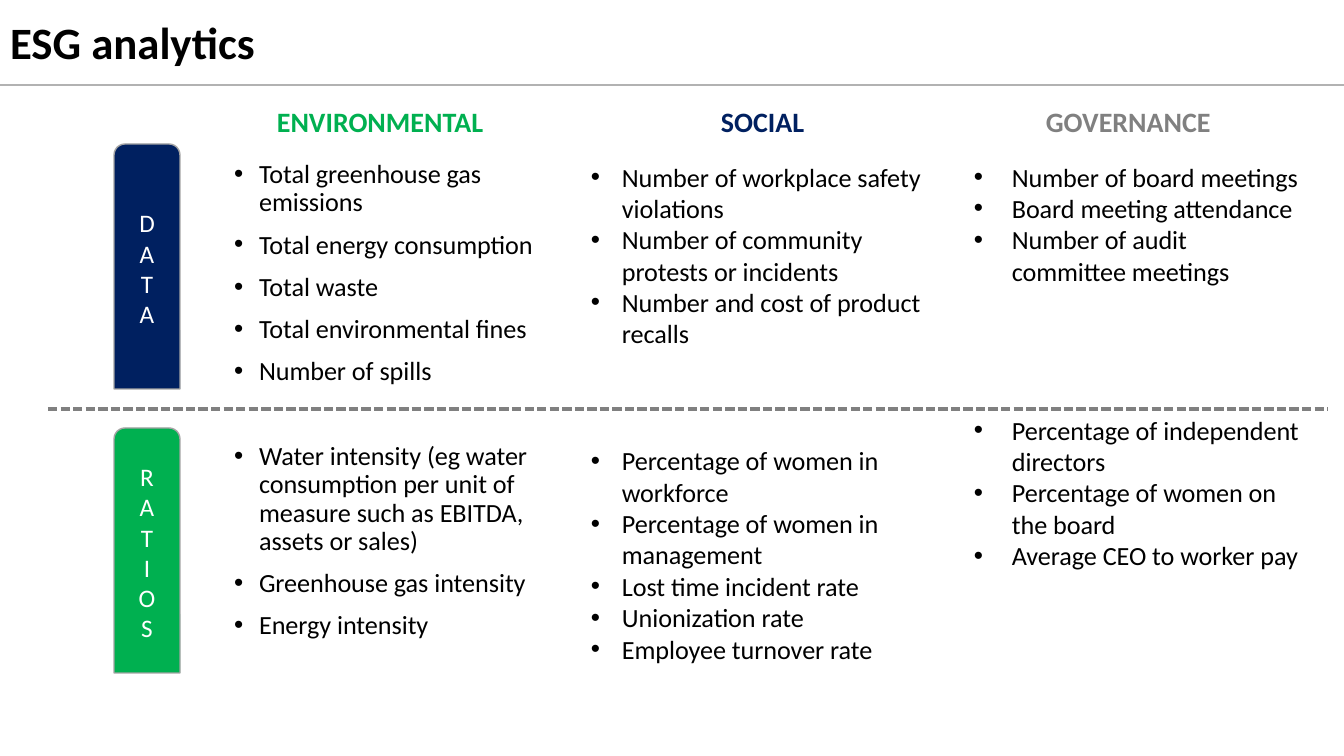
from lxml.etree import SubElement
from pptx import Presentation
from pptx.dml.color import RGBColor
from pptx.enum.dml import MSO_LINE
from pptx.enum.shapes import MSO_CONNECTOR, MSO_SHAPE
from pptx.enum.text import MSO_ANCHOR, MSO_AUTO_SIZE, PP_ALIGN
from pptx.oxml.ns import qn
from pptx.util import Emu, Pt


def px(*values):
    return [Emu(round(value * 914400 / 100.8)) for value in values]


def style(paragraph, size, color, bold=False):
    paragraph.font.name = "Calibri"
    paragraph.font.size = Pt(size)
    paragraph.font.bold = bold
    paragraph.font.color.rgb = RGBColor.from_string(color)


presentation = Presentation()
presentation.slide_width, presentation.slide_height = px(1344, 756)
slide = presentation.slides.add_slide(presentation.slide_layouts[1])
title, body = slide.placeholders

title.left, title.top, title.width, title.height = px(0, 0, 1344, 89)
title.text_frame.text = "ESG analytics"
title.text_frame.auto_size = MSO_AUTO_SIZE.NONE
title.text_frame.vertical_anchor = MSO_ANCHOR.MIDDLE
title_paragraph = title.text_frame.paragraphs[0]
title_paragraph.alignment = PP_ALIGN.LEFT
title_paragraph.line_spacing = 0.9
style(title_paragraph, 32, "000000", True)

columns = [
    {
        "heading": "ENVIRONMENTAL", "color": "00B050", "heading_box": (267, 100, 234, 44),
        "list_box": (224, 156, 349, 586), "indent": 25, "line_spacing": 0.9, "gap": 10, "ratio_gap": 40.5,
        "data": ["Total greenhouse gas emissions", "Total energy consumption", "Total waste",
                 "Total environmental fines", "Number of spills"],
        "ratios": ["Water intensity (eg water consumption per unit of measure such as EBITDA, assets or sales)",
                   "Greenhouse gas intensity", "Energy intensity"],
    },
    {
        "heading": "SOCIAL", "color": "002060", "heading_box": (711, 100, 115, 44),
        "list_box": (581, 156, 375, 526), "indent": 31, "line_spacing": 1.0, "gap": 0, "ratio_gap": 68.4,
        "data": ["Number of workplace safety violations", "Number of community protests or incidents",
                 "Number and cost of product recalls"],
        "ratios": ["Percentage of women in workforce", "Percentage of women in management",
                   "Lost time incident rate", "Unionization rate", "Employee turnover rate"],
    },
    {
        "heading": "GOVERNANCE", "color": "808080", "heading_box": (1036, 100, 204, 44),
        "list_box": (964, 156, 349, 494), "indent": 38, "line_spacing": 1.0, "gap": 0, "ratio_gap": 91.2,
        "data": ["Number of board meetings", "Board meeting attendance", "Number of audit committee meetings"],
        "ratios": ["Percentage of independent directors", "Percentage of women on the board",
                   "Average CEO to worker pay"],
    },
]

for column in columns:
    heading = slide.shapes.add_textbox(*px(*column["heading_box"]))
    heading.text_frame.word_wrap = True
    heading.text_frame.text = column["heading"]
    style(heading.text_frame.paragraphs[0], 20, column["color"], True)

    if column is columns[0]:
        list_shape = body
        body.left, body.top, body.width, body.height = px(*column["list_box"])
    else:
        list_shape = slide.shapes.add_textbox(*px(*column["list_box"]))
    frame = list_shape.text_frame
    frame.word_wrap = True
    frame.auto_size = MSO_AUTO_SIZE.NONE
    frame.text = "\n".join(column["data"] + column["ratios"])
    indent = px(column["indent"])[0]
    for index, paragraph in enumerate(frame.paragraphs):
        properties = paragraph._p.get_or_add_pPr()
        properties.set("marL", str(indent))
        properties.set("indent", str(-indent))
        SubElement(properties, qn("a:buFont"), typeface="Arial")
        SubElement(properties, qn("a:buChar"), char="•")
        paragraph.line_spacing = column["line_spacing"]
        gap = column["ratio_gap"] if index == len(column["data"]) else column["gap"]
        paragraph.space_before = Pt(gap if index else 0)
        style(paragraph, 18.67, "000000")

for label, top, color in [("DATA", 144, "002060"), ("RATIOS", 428, "00B050")]:
    bar = slide.shapes.add_shape(MSO_SHAPE.ROUND_2_SAME_RECTANGLE, *px(114, top, 66, 245))
    bar.shadow.inherit = False
    bar.fill.solid()
    bar.fill.fore_color.rgb = RGBColor.from_string(color)
    bar.line.color.rgb = RGBColor.from_string("A3A3A3")
    bar.line.width = Pt(1)
    bar.text_frame.word_wrap = True
    bar.text_frame.vertical_anchor = MSO_ANCHOR.MIDDLE
    letters = bar.text_frame.paragraphs[0]
    letters.text = "\v".join(label)
    letters.alignment = PP_ALIGN.CENTER
    style(letters, 18, "FFFFFF")

for left, right, y, color, width, dash in [
    (0, 1344, 85, "B2B2B2", 1.5, MSO_LINE.SOLID),
    (48, 1328, 409, "808080", 2.25, MSO_LINE.SQUARE_DOT),
]:
    divider = slide.shapes.add_connector(MSO_CONNECTOR.STRAIGHT, *px(left, y, right, y))
    divider.line.color.rgb = RGBColor.from_string(color)
    divider.line.width = Pt(width)
    divider.line.dash_style = dash
    SubElement(divider._element.spPr, qn("a:effectLst"))

presentation.save("out.pptx")
